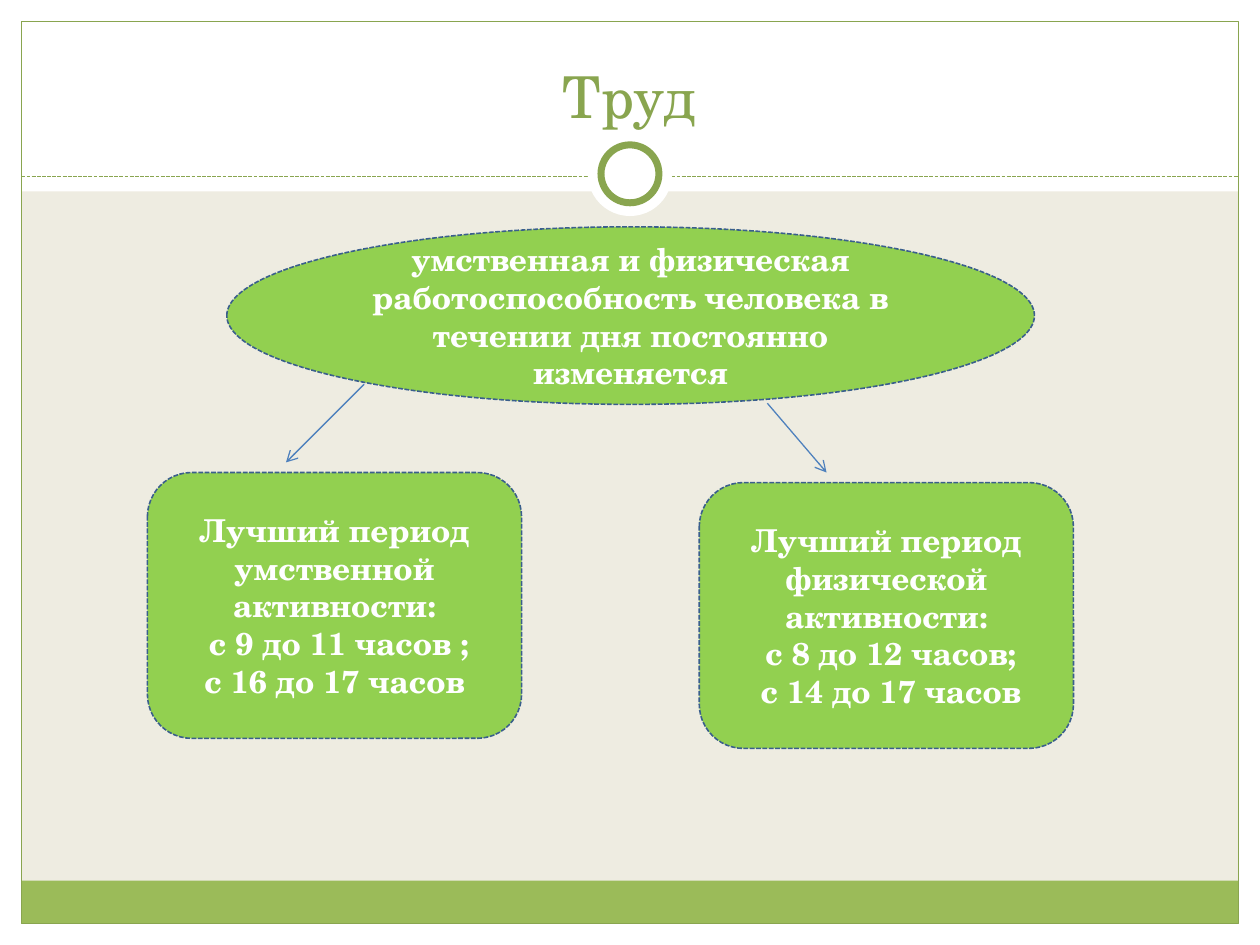
from lxml.etree import SubElement
from pptx import Presentation
from pptx.dml.color import RGBColor
from pptx.enum.dml import MSO_LINE as Dash
from pptx.enum.shapes import MSO_CONNECTOR as Connector, MSO_SHAPE as Shape
from pptx.enum.text import MSO_ANCHOR as Anchor, PP_ALIGN as Align
from pptx.oxml.ns import qn
from pptx.util import Inches, Pt

COLORS = {
    "background": "EEECE1",
    "white": "FFFFFF",
    "footer": "9BBB59",
    "accent": "89A54F",
    "bubble": "92D050",
    "outline": "3A5F8C",
    "arrow": "4F81BD",
}
FONT = "TeX Gyre Schola"
WIDTH, HEIGHT, MARGIN = 10, 7.5, 0.17


class SlideBuilder:
    """Holds the style and the current slide, and adds each kind of element."""

    def __init__(self, deck):
        self.slide = deck.slides.add_slide(deck.slide_layouts[5])
        self.shapes = self.slide.shapes
        fill = self.slide.background.fill
        fill.solid()
        fill.fore_color.rgb = self.color("background")

    def color(self, name):
        return RGBColor.from_string(COLORS[name])

    def style_line(self, line, color, width, dash=None):
        line.color.rgb = self.color(color)
        line.width = Pt(width)
        if dash:
            line.dash_style = dash

    def set_text(self, frame, lines, size, color, anchor, bold=False):
        frame.text = "\n".join(lines)
        frame.word_wrap = True
        frame.vertical_anchor = anchor
        for para in frame.paragraphs:
            para.alignment = Align.CENTER
            for span in para.runs:
                span.font.name = FONT
                span.font.size = Pt(size)
                span.font.bold = bold
                span.font.color.rgb = self.color(color)

    def shape(self, kind, bounds, fill=None, line=None):
        box = self.shapes.add_shape(kind, *map(Inches, bounds))
        box.shadow.inherit = False
        if fill:
            box.fill.solid()
            box.fill.fore_color.rgb = self.color(fill)
        else:
            box.fill.background()
        if line:
            self.style_line(box.line, *line)
        else:
            box.line.fill.background()
        return box

    def bubble(self, kind, bounds, lines):
        box = self.shape(kind, bounds, "bubble", ("outline", 0.9, Dash.SQUARE_DOT))
        self.set_text(box.text_frame, lines, 18, "white", Anchor.MIDDLE, bold=True)

    def line(self, start, end, color, dash=None, arrow=False):
        connector = self.shapes.add_connector(
            Connector.STRAIGHT, *map(Inches, (*start, *end)))
        self.style_line(connector.line, color, 0.75, dash)
        properties = connector.element.spPr
        if arrow:
            SubElement(properties.find(qn("a:ln")), qn("a:tailEnd"), type="arrow")
        SubElement(properties, qn("a:effectLst"))

    def title(self, text, bounds):
        box = self.shapes.title
        box.left, box.top, box.width, box.height = map(Inches, bounds)
        self.set_text(box.text_frame, [text], 33, "accent", Anchor.BOTTOM)
        box.element.getparent().append(box.element)


def main():
    deck = Presentation()
    deck.slide_width, deck.slide_height = Inches(WIDTH), Inches(HEIGHT)
    page = SlideBuilder(deck)
    right, bottom = WIDTH - MARGIN, HEIGHT - MARGIN
    inner_width = right - MARGIN

    for band in ((0, bottom, WIDTH, MARGIN), (0, 0, WIDTH, 1.52),
                 (0, 0, MARGIN, HEIGHT), (right, 0, MARGIN, HEIGHT)):
        page.shape(Shape.RECTANGLE, band, "white")
    page.shape(Shape.RECTANGLE, (MARGIN, 6.99, inner_width, 0.34), "footer")
    page.shape(Shape.RECTANGLE, (MARGIN, MARGIN, inner_width, bottom - MARGIN),
               line=("accent", 0.75))
    page.line((MARGIN, 1.4), (right, 1.4), "accent", Dash.SQUARE_DOT)
    for size, line in ((0.67, None), (0.46, ("accent", 4))):
        page.shape(Shape.OVAL, (5 - size / 2, 1.38 - size / 2, size, size),
                   "white", line)
    page.title("Труд", (0.33, 0.25, 9.33, 0.83))

    page.bubble(Shape.OVAL, (1.8, 1.8, 6.41, 1.41),
                ["умственная и физическая работоспособность человека "
                 "в течении дня постоянно изменяется"])
    for start, end in (((6.09, 3.2), (6.56, 3.75)), ((2.89, 3.05), (2.27, 3.67))):
        page.line(start, end, "arrow", arrow=True)
    periods = (
        (1.17, 3.75, "умственной", (" с 9 до 11 часов ;", "с 16 до 17 часов")),
        (5.55, 3.83, "физической", (" с 8 до 12 часов;", " с 14 до 17 часов")),
    )
    for left, top, activity, hours in periods:
        page.bubble(Shape.ROUNDED_RECTANGLE, (left, top, 2.97, 2.11),
                    [f"Лучший период {activity} активности:", *hours])

    deck.save("out.pptx")


if __name__ == "__main__":
    main()
